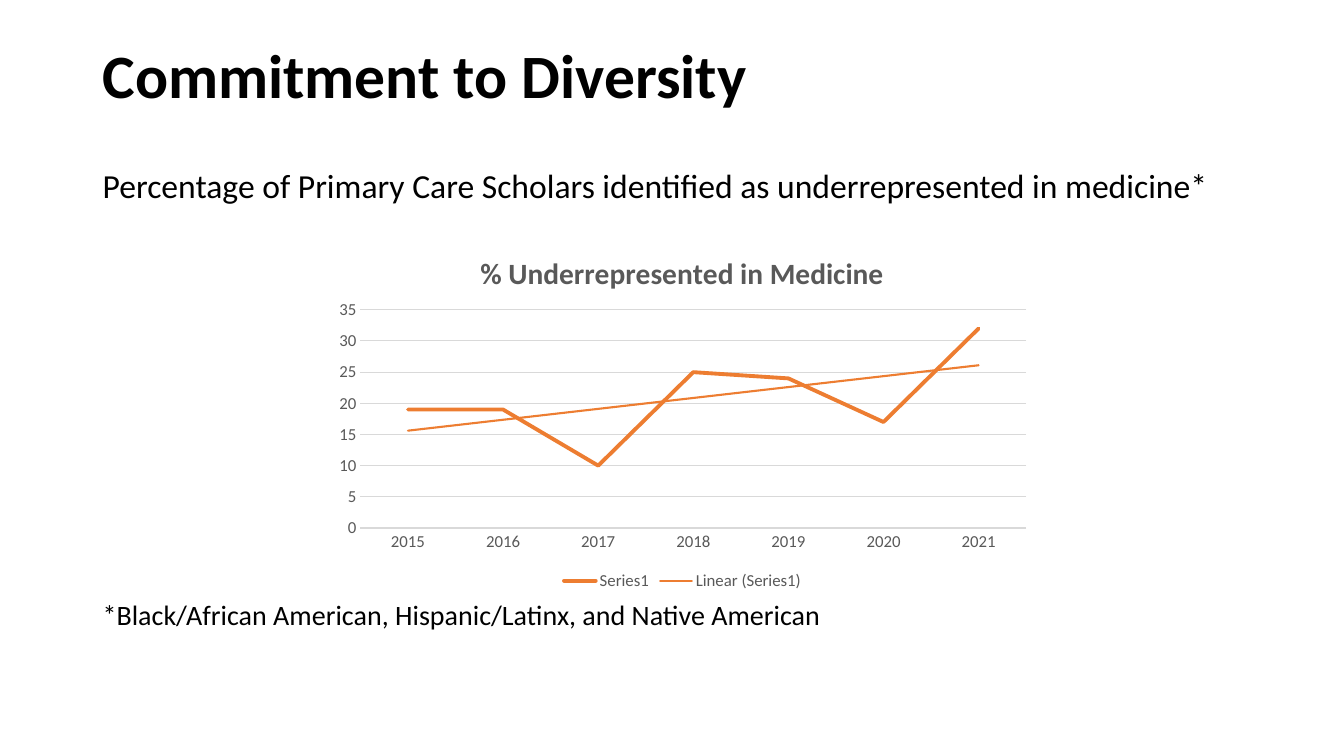
from dataclasses import dataclass

from lxml.etree import _Element as Element
from pptx import Presentation
from pptx.chart.axis import _BaseAxis as Axis
from pptx.chart.chart import Chart
from pptx.chart.data import CategoryChartData
from pptx.dml.color import RGBColor
from pptx.enum.chart import XL_CHART_TYPE as ChartType
from pptx.enum.chart import XL_LEGEND_POSITION as LegendPosition
from pptx.enum.chart import XL_TICK_MARK as TickMark
from pptx.oxml import parse_xml
from pptx.oxml.ns import nsdecls, qn
from pptx.slide import Slide
from pptx.text.text import Font
from pptx.util import Inches, Pt

BLACK = RGBColor(0x00, 0x00, 0x00)
GRAY = RGBColor(0x59, 0x59, 0x59)
LIGHT_GRAY = RGBColor(0xD9, 0xD9, 0xD9)
ORANGE = RGBColor(0xED, 0x7D, 0x31)
FONT_NAME = "Calibri"

PERCENT_BY_YEAR = {
    "2015": 19, "2016": 19, "2017": 10, "2018": 25,
    "2019": 24, "2020": 17, "2021": 32,
}


@dataclass
class TextLine:
    text: str
    top: float
    height: float
    size: int
    bold: bool = False


TEXT_LINES = [
    TextLine("Commitment to Diversity", 0.4, 0.8, 44, True),
    TextLine("Percentage of Primary Care Scholars identified as "
             "underrepresented in medicine*", 1.63, 0.5, 24),
    TextLine("*Black/African American, Hispanic/Latinx, and Native American",
             5.92, 0.45, 20),
]


def style_font(font: Font, size: float, color: RGBColor, bold: bool = False) -> None:
    font.name = FONT_NAME
    font.size = Pt(size)
    font.bold = bold
    font.color.rgb = color


def add_text_line(page: Slide, line: TextLine) -> None:
    box = page.shapes.add_textbox(
        Inches(0.92), Inches(line.top), Inches(11.5), Inches(line.height))
    box.text_frame.word_wrap = True
    box.text_frame.text = line.text
    para = box.text_frame.paragraphs[0]
    para.line_spacing = 0.9
    style_font(para.runs[0].font, line.size, BLACK, line.bold)


def make_layout(**places: float) -> Element:
    """Build a manual chart layout from fractions of the chart area."""
    target = '<c:layoutTarget val="inner"/>' if "w" in places else ""
    modes = '<c:xMode val="edge"/><c:yMode val="edge"/>'
    values = "".join(f'<c:{key} val="{value}"/>' for key, value in places.items())
    return parse_xml(f'<c:layout {nsdecls("c")}><c:manualLayout>{target}{modes}'
                     f'{values}</c:manualLayout></c:layout>')


def set_layout(parent: Element, index: int, layout: Element) -> None:
    for old_layout in parent.findall(qn("c:layout")):
        parent.remove(old_layout)
    parent.insert(index, layout)


def style_axis(axis: Axis) -> None:
    axis.major_tick_mark = TickMark.NONE
    axis.minor_tick_mark = TickMark.NONE
    style_font(axis.tick_labels.font, 12, GRAY)


def add_trend_line(chart: Chart) -> None:
    trend = parse_xml(
        f'<c:trendline {nsdecls("c", "a")}><c:spPr><a:ln w="{Pt(1.5)}" cap="rnd">'
        f'<a:solidFill><a:srgbClr val="{ORANGE}"/></a:solidFill></a:ln></c:spPr>'
        '<c:trendlineType val="linear"/><c:dispRSqr val="0"/>'
        '<c:dispEq val="0"/></c:trendline>')
    series = chart.plots[0].series[0]
    series._element.find(qn("c:cat")).addprevious(trend)


def add_percent_chart(page: Slide) -> None:
    data = CategoryChartData()
    data.categories = list(PERCENT_BY_YEAR)
    data.add_series("Series1", list(PERCENT_BY_YEAR.values()))
    chart = page.shapes.add_chart(
        ChartType.LINE, Inches(3.22), Inches(2.23), Inches(7.1), Inches(3.67),
        data).chart
    style_font(chart.font, 10, BLACK)

    # Title and legend
    title = chart.chart_title
    title.text_frame.text = "% Underrepresented in Medicine"
    style_font(title.text_frame.paragraphs[0].runs[0].font, 21, GRAY, True)
    title.include_in_layout = False
    set_layout(title._element, 1, make_layout(x=0.21, y=0.06))
    chart.has_legend = True
    chart.legend.position = LegendPosition.BOTTOM
    chart.legend.include_in_layout = False
    style_font(chart.legend.font, 12, GRAY)

    # Axes and gridlines
    years, percents = chart.category_axis, chart.value_axis
    style_axis(years)
    style_axis(percents)
    years.format.line.color.rgb = LIGHT_GRAY
    years.format.line.width = Pt(1)
    percents.minimum_scale, percents.maximum_scale = 0, 35
    percents.major_unit = 5
    percents.format.line.fill.background()
    percents.major_gridlines.format.line.color.rgb = LIGHT_GRAY
    percents.major_gridlines.format.line.width = Pt(0.75)

    # Series, trend and plot area
    chart.plots[0].vary_by_categories = False
    series = chart.plots[0].series[0]
    series.smooth = False
    series.format.line.color.rgb = ORANGE
    series.format.line.width = Pt(2.75)
    series.format.line._ln.set("cap", "rnd")
    add_trend_line(chart)
    plot_area = chart._chartSpace.chart.plotArea
    set_layout(plot_area, 0, make_layout(x=0.05, y=0.23, w=0.93, h=0.59))


def main() -> None:
    deck = Presentation()
    deck.slide_width, deck.slide_height = Inches(13.33), Inches(7.5)
    page = deck.slides.add_slide(deck.slide_layouts[6])
    for line in TEXT_LINES:
        add_text_line(page, line)
    add_percent_chart(page)
    deck.save("out.pptx")


if __name__ == "__main__":
    main()
